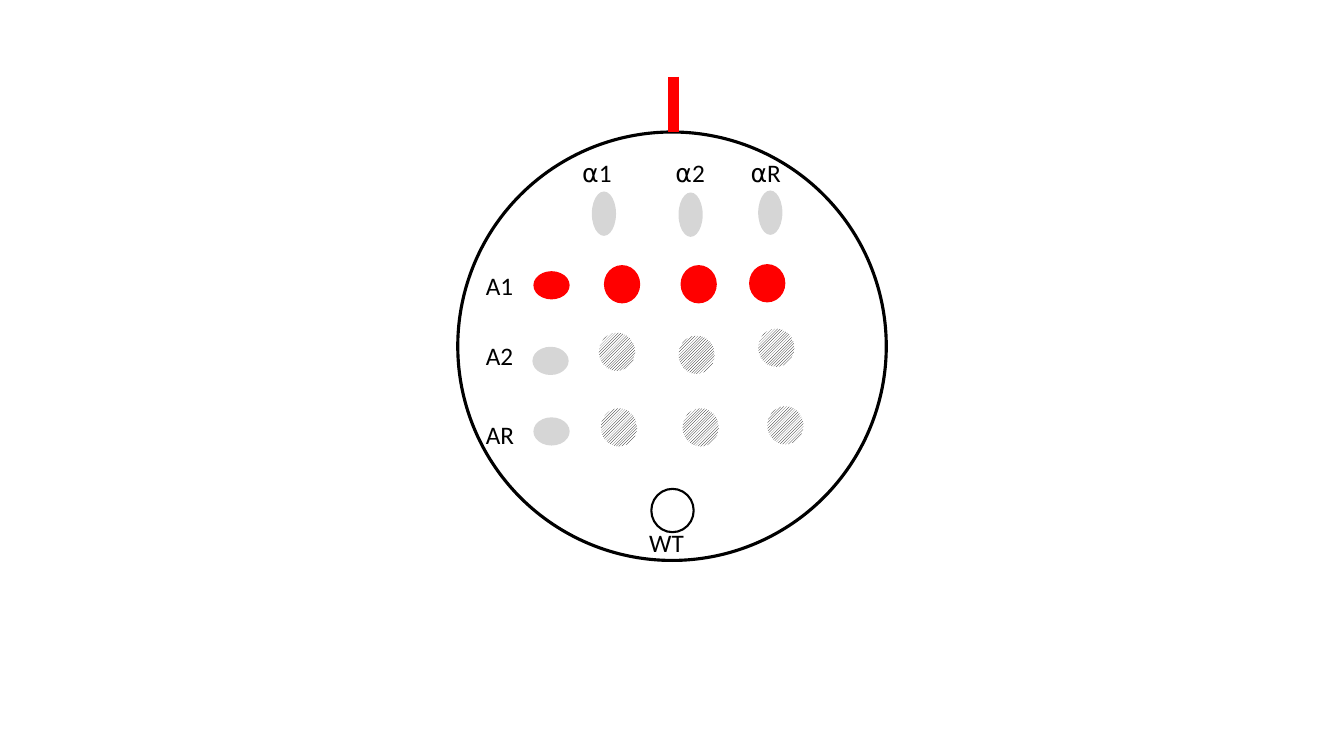
from dataclasses import dataclass

from lxml import etree
from pptx import Presentation
from pptx.dml.color import RGBColor
from pptx.enum.dml import MSO_PATTERN
from pptx.enum.shapes import MSO_CONNECTOR, MSO_SHAPE
from pptx.enum.text import MSO_ANCHOR, MSO_AUTO_SIZE, PP_ALIGN
from pptx.oxml.ns import qn
from pptx.util import Inches, Pt

OVAL = MSO_SHAPE.OVAL
STRAIGHT = MSO_CONNECTOR.STRAIGHT
HATCH = MSO_PATTERN.LIGHT_UPWARD_DIAGONAL
LEFT, CENTER = PP_ALIGN.LEFT, PP_ALIGN.CENTER
TOP = MSO_ANCHOR.TOP
GROW = MSO_AUTO_SIZE.SHAPE_TO_FIT_TEXT


@dataclass(frozen=True)
class Theme:
    ink: RGBColor = RGBColor(0, 0, 0)
    paper: RGBColor = RGBColor(255, 255, 255)
    growth: RGBColor = RGBColor(255, 0, 0)
    faint_percent: int = 16
    font: str = "Calibri"
    label_size: Pt = Pt(18)
    dish_line: Pt = Pt(2.25)
    control_line: Pt = Pt(1.5)
    marker_line: Pt = Pt(7.75)


THEME = Theme()

STREAK_SIZE = (0.24, 0.44)
ROW_STREAK_SIZE = (0.28, 0.36)
PATCH_SIZE = (0.36, 0.38)
LABEL_HEIGHT = 0.49
COLUMN_LABEL_TOP = 1.51
ROW_LABEL_LEFT = 4.72
ROW_LABEL_WIDTH = 0.75

# Label, label left, label width, streak left, streak top
COLUMNS = [
    ("⍺1", 5.57, 0.70, 5.87, 1.90),
    ("⍺2", 6.43, 0.83, 6.73, 1.91),
    ("⍺R", 7.18, 0.83, 7.52, 1.89),
]
# Label, label top, streak position, mating patch positions, whether it grows
ROWS = [
    ("A1", 2.63, (5.33, 2.65), [(5.99, 2.63), (6.75, 2.63), (7.43, 2.62)], True),
    ("A2", 3.33, (5.32, 3.40), [(5.94, 3.30), (6.73, 3.33), (7.52, 3.26)], False),
    ("AR", 4.11, (5.33, 4.10), [(5.96, 4.05), (6.77, 4.05), (7.61, 4.03)], False),
]


def add_oval(slide, position, size):
    oval = slide.shapes.add_shape(OVAL, *map(Inches, position + size))
    oval.shadow.inherit = False
    oval.line.fill.background()
    return oval


def add_ring(slide, position, size, weight):
    ring = add_oval(slide, position, size)
    ring.fill.background()
    ring.line.color.rgb = THEME.ink
    ring.line.width = weight


def add_streak(slide, position, size, grows=False):
    streak = add_oval(slide, position, size)
    streak.fill.solid()
    streak.fill.fore_color.rgb = THEME.growth if grows else THEME.ink
    if not grows:
        color = streak._element.spPr.find(qn("a:solidFill"))[0]
        alpha = etree.SubElement(color, qn("a:alpha"))
        alpha.set("val", str(THEME.faint_percent * 1000))
    return streak


def add_hatched_patch(slide, position):
    patch = add_oval(slide, position, PATCH_SIZE)
    patch.fill.patterned()
    patch.fill.pattern = HATCH
    patch.fill.fore_color.rgb = THEME.ink
    patch.fill.back_color.rgb = THEME.paper


def add_label(slide, text, left, top, width, align=LEFT):
    label = slide.shapes.add_textbox(*map(Inches, (left, top, width, LABEL_HEIGHT)))
    frame = label.text_frame
    frame.text = text
    frame.word_wrap = True
    frame.auto_size = GROW
    frame.vertical_anchor = TOP
    paragraph = frame.paragraphs[0]
    paragraph.alignment = align
    font = paragraph.runs[0].font
    font.name = THEME.font
    font.size = THEME.label_size
    font.color.rgb = THEME.ink


def add_marker(slide, x, top, bottom):
    marker = slide.shapes.add_connector(STRAIGHT, *map(Inches, (x, top, x, bottom)))
    marker.line.color.rgb = THEME.growth
    marker.line.width = THEME.marker_line
    etree.SubElement(marker._element.spPr, qn("a:effectLst"))


def main():
    deck = Presentation()
    deck.slide_width, deck.slide_height = Inches(13.33), Inches(7.5)
    slide = deck.slides.add_slide(deck.slide_layouts[6])

    # Dish with its orientation marker
    add_ring(slide, (4.54, 1.31), (4.25, 4.25), THEME.dish_line)
    add_marker(slide, 6.68, 0.76, 1.31)

    # Column streaks
    for text, left, width, streak_left, streak_top in COLUMNS:
        add_label(slide, text, left, COLUMN_LABEL_TOP, width, CENTER)
        add_streak(slide, (streak_left, streak_top), STREAK_SIZE)

    # Row streaks and mating patches
    for text, label_top, streak_position, patches, grows in ROWS:
        add_label(slide, text, ROW_LABEL_LEFT, label_top, ROW_LABEL_WIDTH)
        row_streak = add_streak(slide, streak_position, ROW_STREAK_SIZE, grows)
        row_streak.rotation = 90
        for position in patches:
            if grows:
                add_streak(slide, position, PATCH_SIZE, grows)
            else:
                add_hatched_patch(slide, position)

    # Wild-type control
    add_ring(slide, (6.46, 4.85), (0.42, 0.43), THEME.control_line)
    add_label(slide, "WT", 6.34, 5.18, ROW_LABEL_WIDTH)

    deck.save("out.pptx")


if __name__ == "__main__":
    main()
